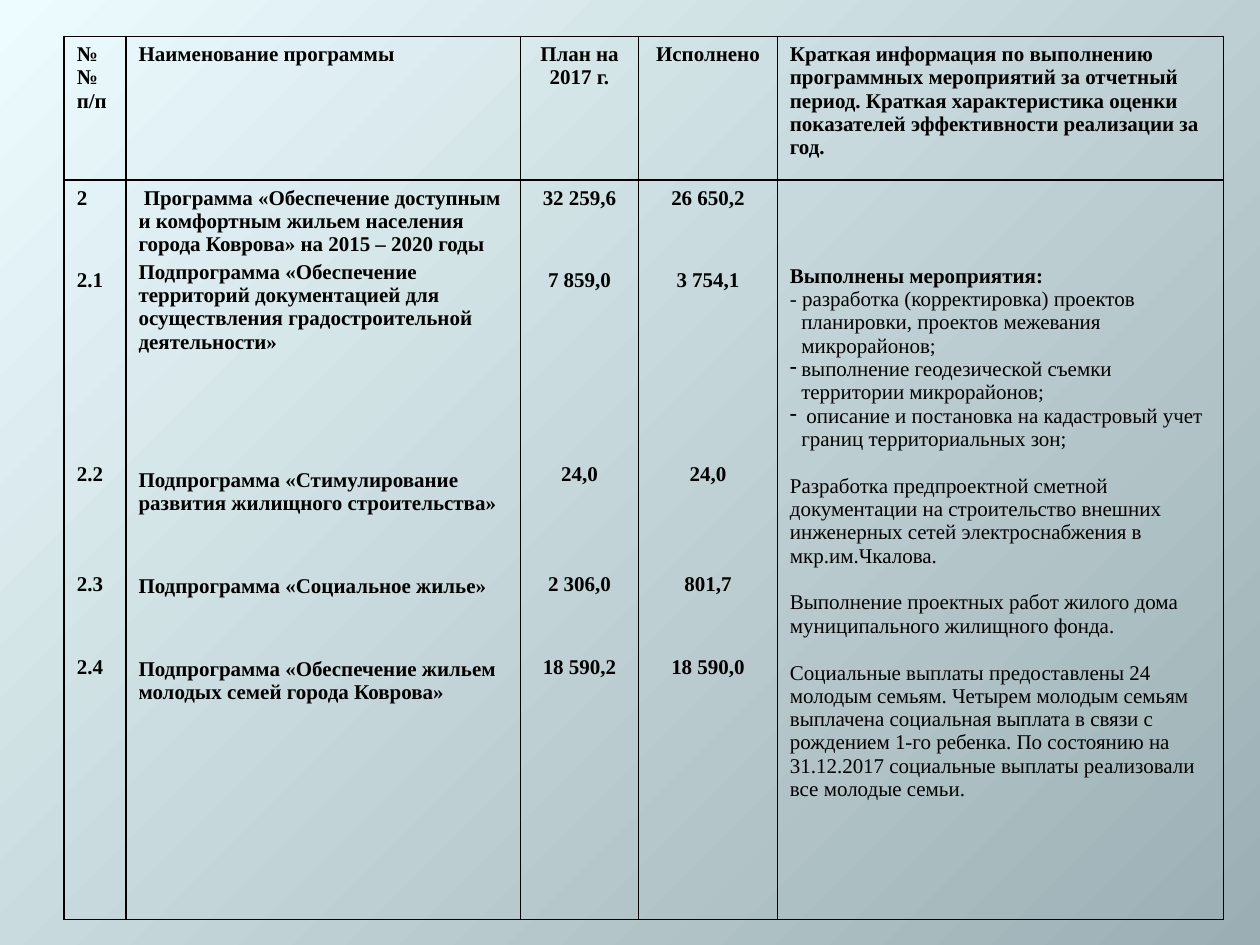
from dataclasses import dataclass
from pptx import Presentation
from pptx.dml.color import RGBColor
from pptx.enum.text import PP_ALIGN
from pptx.oxml import parse_xml
from pptx.oxml.ns import nsdecls, qn
from pptx.util import Inches, Pt


@dataclass(frozen=True)
class Theme:
    light: str = "EDFCFF"
    dark: str = "9BAEB3"
    ink: str = "000000"
    font: str = "Times New Roman"
    size: float = 12
    line: float = 13.4
    spacing: float = 2.4


theme = Theme()


def write(frame, text, bold=True, align=PP_ALIGN.LEFT, before=0, hang=0, bullet=None):
    paragraph = frame.paragraphs[0] if not frame.text else frame.add_paragraph()
    paragraph.alignment = align
    paragraph.space_before = Pt(before)
    run = paragraph.add_run()
    run.text = text
    run.font.name = theme.font
    run.font.size = Pt(theme.size)
    run.font.bold = bold
    run.font.color.rgb = RGBColor.from_string(theme.ink)
    if hang:
        properties = paragraph._p.get_or_add_pPr()
        properties.set("marL", str(Inches(hang)))
        properties.set("indent", str(-Inches(hang)))
        if bullet:
            properties.append(parse_xml(f'<a:buChar {nsdecls("a")} char="{bullet}"/>'))


def style_cell(cell):
    cell.fill.background()
    properties = cell._tc.get_or_add_tcPr()
    for index, side in enumerate(("lnL", "lnR", "lnT", "lnB")):
        properties.insert(index, parse_xml(
            f'<a:{side} {nsdecls("a")} w="{Pt(1)}"><a:solidFill>'
            f'<a:srgbClr val="{theme.ink}"/></a:solidFill></a:{side}>'))


presentation = Presentation()
presentation.slide_width = Inches(10)
presentation.slide_height = Inches(7.5)
slide = presentation.slides.add_slide(presentation.slide_layouts[6])

backdrop = slide.background.fill
backdrop.gradient()
for stop, color in zip(backdrop.gradient_stops, (theme.light, theme.dark)):
    stop.color.rgb = RGBColor.from_string(color)
direction = next(slide.element.iter(qn("a:lin")))
direction.getparent().replace(direction, parse_xml(
    f'<a:path {nsdecls("a")} path="circle"><a:fillToRect r="100000" b="100000"/></a:path>'))

columns = [0.49, 3.13, 0.94, 1.1, 3.54]
rows = [1.14, 5.87]
programs = slide.shapes.add_table(
    len(rows), len(columns), Inches(0.51), Inches(0.29),
    Inches(sum(columns)), Inches(sum(rows))).table
for column, width in zip(programs.columns, columns):
    column.width = Inches(width)
for row, height in zip(programs.rows, rows):
    row.height = Inches(height)
for cell in programs.iter_cells():
    style_cell(cell)

aligns = [PP_ALIGN.LEFT, PP_ALIGN.LEFT, PP_ALIGN.CENTER, PP_ALIGN.CENTER, PP_ALIGN.LEFT]
headings = [
    "№№ п/п",
    "Наименование программы",
    "План на 2017 г.",
    "Исполнено",
    "Краткая информация по выполнению программных мероприятий за отчетный период. "
    "Краткая характеристика оценки показателей эффективности реализации за год.",
]
for index, heading in enumerate(headings):
    write(programs.cell(0, index).text_frame, heading, align=aligns[index])

entries = [
    ("2", " Программа «Обеспечение доступным и комфортным жильем населения города Коврова» "
     "на 2015 – 2020 годы", "32 259,6", "26 650,2"),
    ("2.1", "Подпрограмма «Обеспечение территорий документацией для осуществления "
     "градостроительной деятельности»", "7 859,0", "3 754,1"),
    ("2.2", "Подпрограмма «Стимулирование развития жилищного строительства»", "24,0", "24,0"),
    ("2.3", "Подпрограмма «Социальное жилье»", "2 306,0", "801,7"),
    ("2.4", "Подпрограмма «Обеспечение жильем молодых семей города Коврова»",
     "18 590,2", "18 590,0"),
]
figure_gaps = [None, 2, 6, 3, 2]
name_gaps = [None, 0, 4, 2, 2]
pitch = theme.line + theme.spacing
for entry, figure_gap, name_gap in zip(entries, figure_gaps, name_gaps):
    for index, text in enumerate(entry):
        gap = name_gap if index == 1 else figure_gap
        before = 0 if gap is None else theme.spacing + gap * pitch
        write(programs.cell(1, index).text_frame, text, align=aligns[index], before=before)

report_cell = programs.cell(1, 4)
report_cell.margin_top = Inches(0.67)
report = report_cell.text_frame
write(report, "Выполнены мероприятия:")
activities = [
    ("- разработка (корректировка) проектов планировки, проектов межевания микрорайонов;", None),
    ("выполнение геодезической съемки территории микрорайонов;", "-"),
    (" описание и постановка на кадастровый учет границ территориальных зон;", "-"),
]
for activity, bullet in activities:
    write(report, activity, bold=False, hang=0.09, bullet=bullet)
results = [
    "Разработка предпроектной сметной документации на строительство внешних инженерных "
    "сетей электроснабжения в мкр.им.Чкалова.",
    "Выполнение проектных работ жилого дома муниципального жилищного фонда.",
    "Социальные выплаты предоставлены 24 молодым семьям. Четырем молодым семьям выплачена "
    "социальная выплата в связи с рождением 1-го ребенка. По состоянию на 31.12.2017 "
    "социальные выплаты реализовали все молодые семьи.",
]
for result in results:
    write(report, result, bold=False, before=theme.line)

presentation.save("out.pptx")
